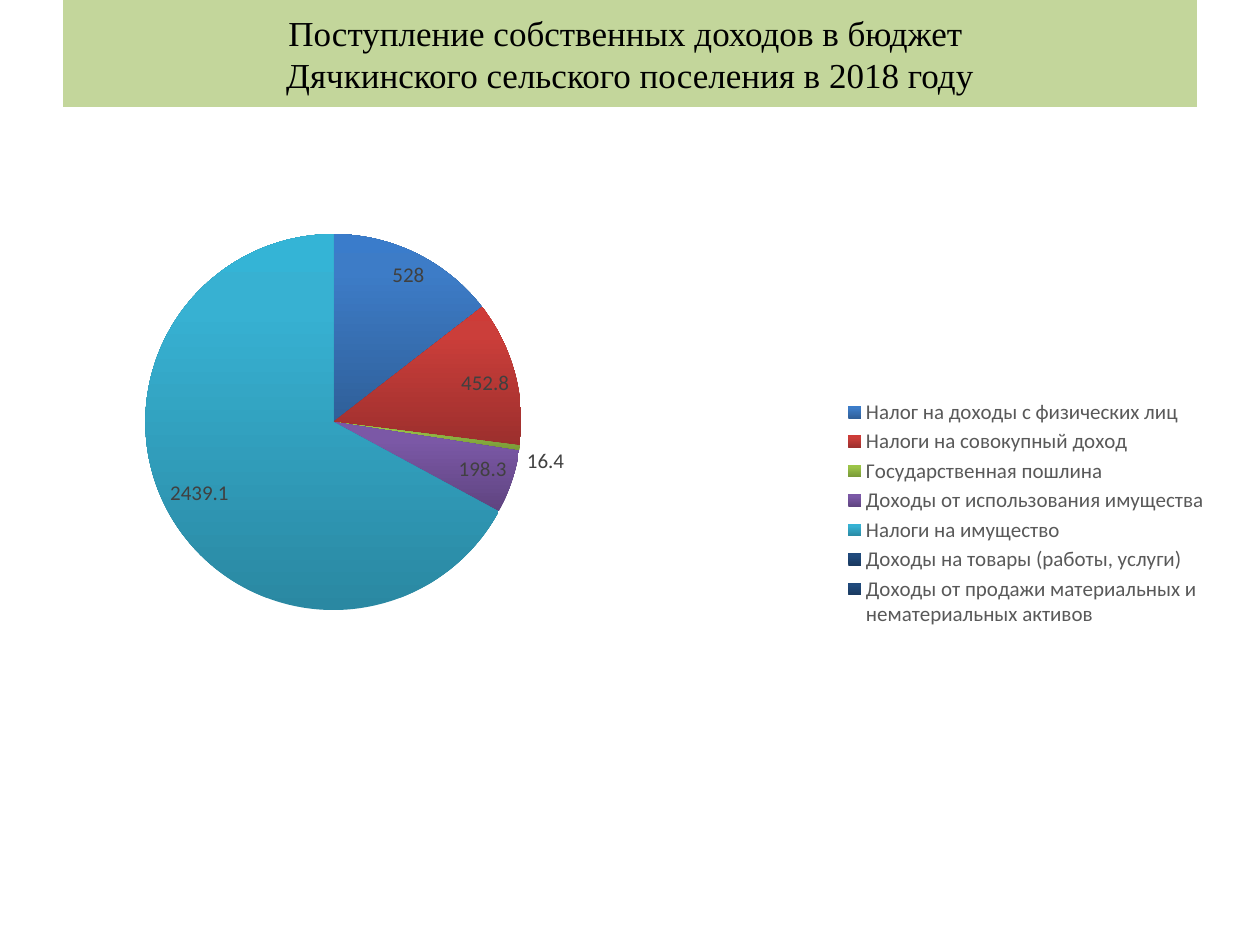
import copy
import pptx
import pptx.chart.data
import pptx.dml.color
import pptx.enum.chart
import pptx.enum.text
import pptx.util
from lxml import etree

HUES = {
    "band": "C3D69B", "ink": "000000", "label": "404040", "key": "595959",
    # dark, middle and light stops of each slice
    "blue": ("2F5F99", "3D7CC7", "3A7CCB"),
    "red": ("9C2F2D", "CB3E3A", "CE3B37"),
    "green": ("779737", "9BC348", "9DC746"),
    "plum": ("5F4480", "7B58A6", "7C57A8"),
    "teal": ("2A88A2", "37B1D2", "34B4D6"),
    "navy": ("19395F", "204A7C", "1E4A7E"),
}
STOPS = (0, 0.8, 1)
ROWS = [
    ("Налог на доходы с физических лиц", 528, "blue"),
    ("Налоги на совокупный доход", 452.8, "red"),
    ("Государственная пошлина ", 16.4, "green"),
    ("Доходы от использования имущества", 198.3, "plum"),
    ("Налоги на имущество", 2439.1, "teal"),
    ("Доходы на товары (работы, услуги)", None, "navy"),
    ("Доходы от продажи материальных и \nнематериальных активов", None, "navy"),
]


def rgb(code):
    return pptx.dml.color.RGBColor.from_string(code)


def style(item, text=None, size=12, face="Calibri", hue="ink"):
    """Format a font holder; with text given, write it there first."""
    if text is not None:
        item.text = text
        item.alignment = pptx.enum.text.PP_ALIGN.CENTER
        item = item.runs
    else:
        item = [item]
    for part in item:
        part.font.size = pptx.util.Pt(size)
        part.font.name = face
        part.font.color.rgb = rgb(HUES[hue])


deck = pptx.Presentation()
deck.slide_width = pptx.util.Inches(10)
deck.slide_height = pptx.util.Inches(7.5)
wide, high = deck.slide_width, deck.slide_height
slide = deck.slides.add_slide(deck.slide_layouts[5])

# Title band
edge = int(wide * 0.05)
band = int(high * 0.113)
title = slide.shapes.title
title.left, title.top = edge, 0
title.width, title.height = wide - 2 * edge, band
title.fill.solid()
title.fill.fore_color.rgb = rgb(HUES["band"])
frame = title.text_frame
frame.vertical_anchor = pptx.enum.text.MSO_ANCHOR.MIDDLE
style(frame.paragraphs[0],
      "Поступление собственных доходов в бюджет \v"
      "Дячкинского сельского поселения в 2018 году",
      size=20, face="Times New Roman")

# Pie chart
data = pptx.chart.data.CategoryChartData()
data.categories = [row[0] for row in ROWS]
data.add_series("Series 1", [row[1] for row in ROWS])
chart = slide.shapes.add_chart(
    pptx.enum.chart.XL_CHART_TYPE.PIE, edge, band,
    int(wide * 0.921), int(high * 0.86), data).chart
chart.has_title = False
style(chart, size=10)

# Slices, shaded from dark at the bottom to light at the top
plot = chart.plots[0]
plot.vary_by_categories = True
for n, (name, value, hue) in enumerate(ROWS):
    fill = plot.series[0].points[n].format.fill
    fill.gradient()
    fill.gradient_angle = 90
    ramp = chart._chartSpace.xpath(".//a:gsLst")[-1]
    ramp.append(copy.deepcopy(ramp[-1]))
    for stop, place, code in zip(fill.gradient_stops, STOPS, HUES[hue]):
        stop.position = place
        stop.color.rgb = rgb(code)

# Value labels
plot.has_data_labels = True
tags = plot.data_labels
tags.show_value = True
tags.show_percentage = False
tags.position = pptx.enum.chart.XL_LABEL_POSITION.BEST_FIT
style(tags, hue="label")

# Legend
chart.has_legend = True
key = chart.legend
key.position = pptx.enum.chart.XL_LEGEND_POSITION.RIGHT
key.include_in_layout = False
style(key, hue="key")

# Places of the pie and the legend, as shares of the chart
NS = "http://schemas.openxmlformats.org/drawingml/2006/chart"
SPOTS = {
    "plotArea": (0.071, 0.117, 0.324, 0.542),
    "legend": (0.67, 0.355, 0.32, 0.29),
}
for area, spot in SPOTS.items():
    node = chart._chartSpace.find(f".//{{{NS}}}{area}")
    for old in node.findall(f"{{{NS}}}layout"):
        node.remove(old)
    outer = etree.Element(f"{{{NS}}}layout")
    inner = etree.SubElement(outer, f"{{{NS}}}manualLayout")
    pairs = [("xMode", "edge"), ("yMode", "edge"), *zip("xywh", spot)]
    if area == "plotArea":
        pairs.insert(0, ("layoutTarget", "inner"))
    for tag, val in pairs:
        etree.SubElement(inner, f"{{{NS}}}{tag}", val=str(val))
    node.insert(0 if area == "plotArea" else 1, outer)

deck.save("out.pptx")
